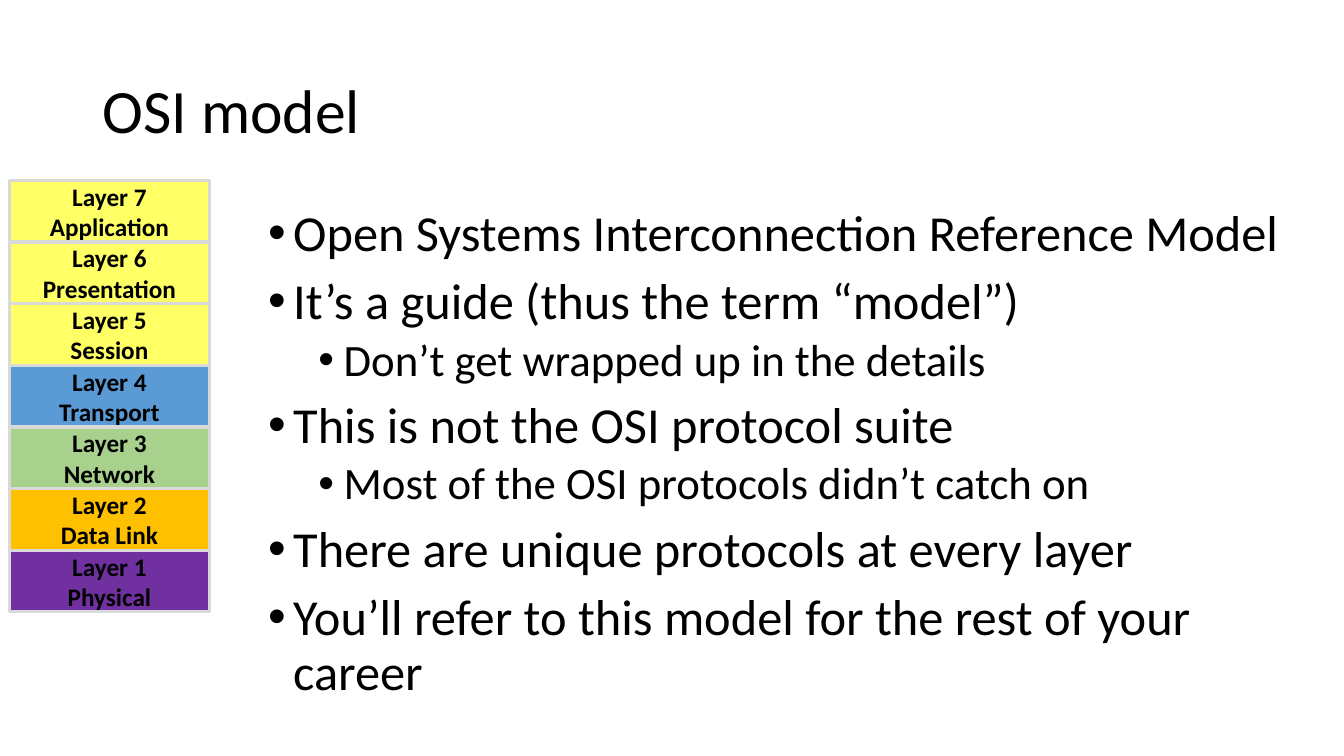
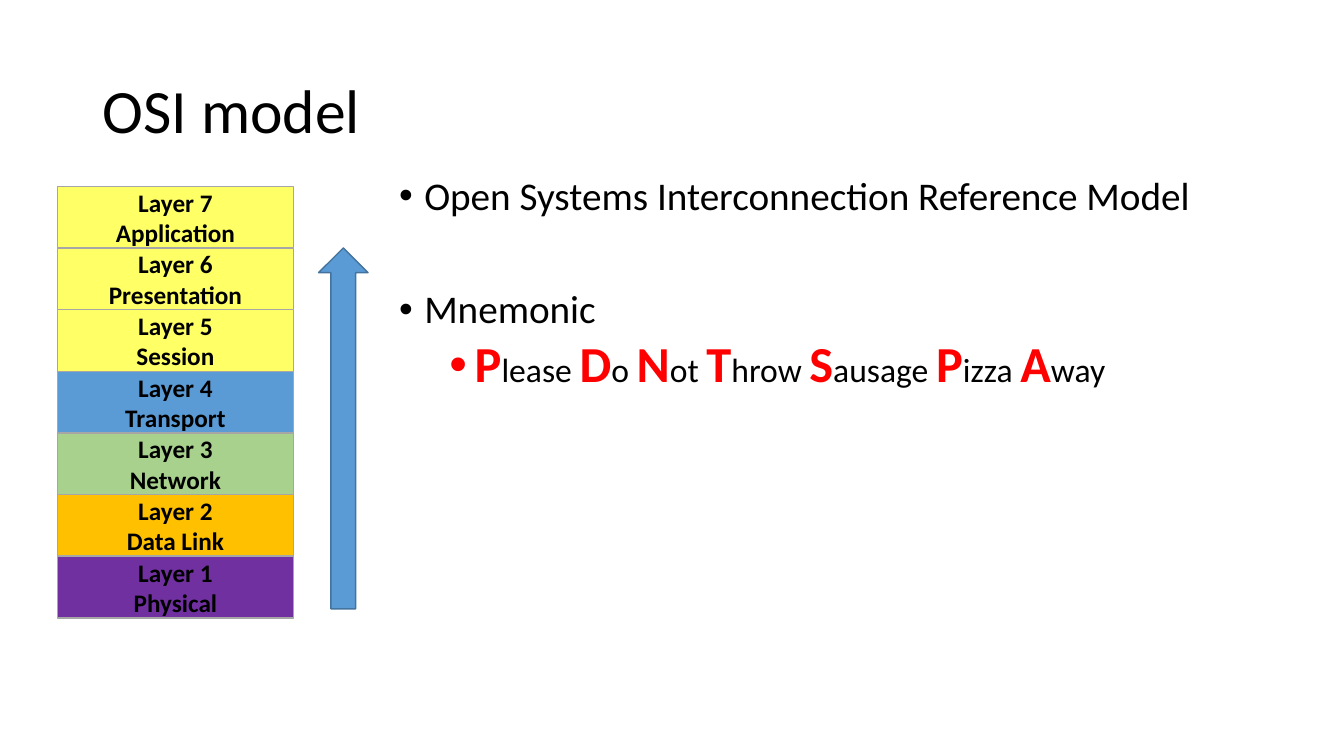
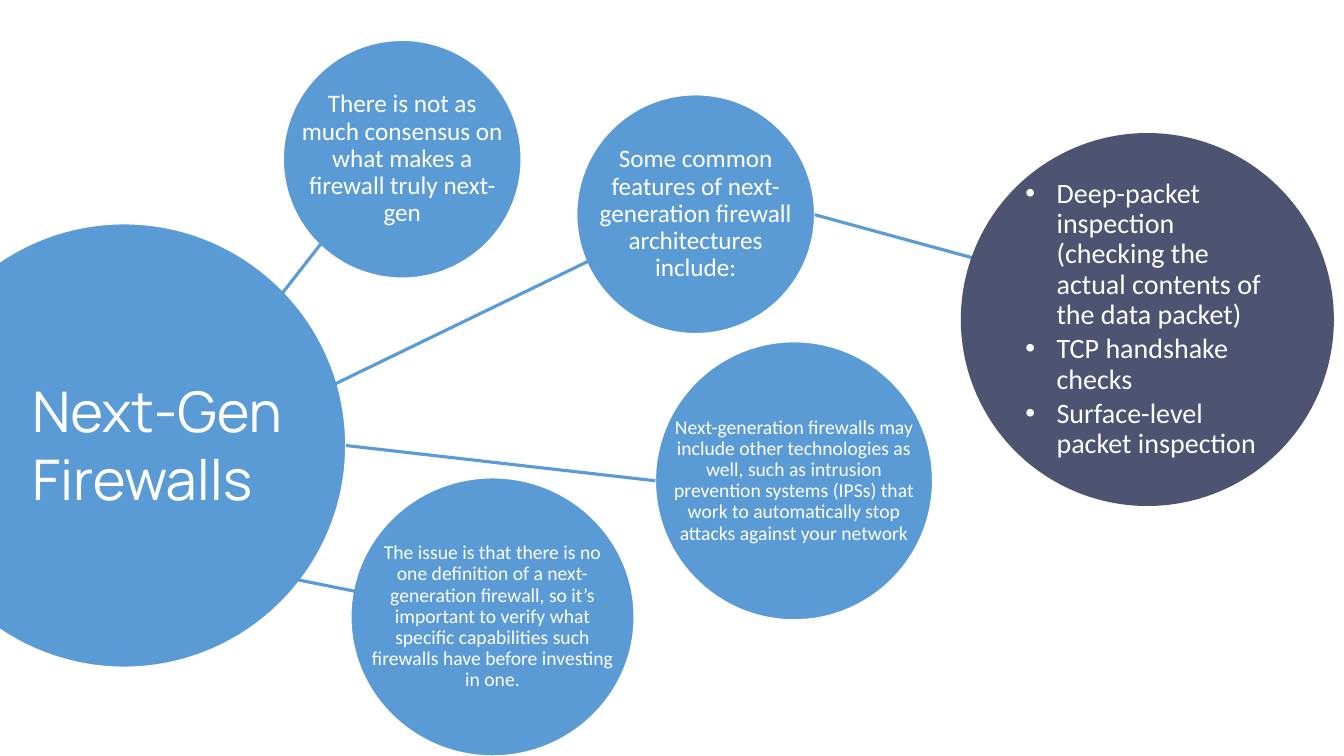
from dataclasses import dataclass
from math import acos, cos, pi, sin, tan

from lxml.etree import SubElement
from pptx import Presentation
from pptx.dml.color import RGBColor as RGB
from pptx.enum.shapes import MSO_CONNECTOR as LINE, MSO_SHAPE as SHAPE
from pptx.enum.text import MSO_ANCHOR as ANCHOR, PP_ALIGN as ALIGN
from pptx.oxml.ns import qn
from pptx.util import Inches, Pt


@dataclass(frozen=True)
class Theme:
    # Colours
    black: str = "000000"
    white: str = "FFFFFF"
    red: str = "FF0000"
    blue: str = "5B9BD5"
    blue_edge: str = "43739E"
    navy: str = "4C5471"
    yellow: str = "FFFF66"
    green: str = "A9D18E"
    orange: str = "FFC000"
    purple: str = "7030A0"
    light_grey: str = "D9D9D9"
    grey: str = "A6A6A6"
    # Fonts and type sizes
    font: str = "Calibri"
    display_font: str = "Manrope"
    title: int = 44
    display: int = 40
    body: int = 36
    sub: int = 32
    medium: int = 28
    small: int = 24
    feature: int = 20
    label: int = 18
    note: int = 14


T = Theme()

LAYERS = [
    ("Application", T.yellow),
    ("Presentation", T.yellow),
    ("Session", T.yellow),
    ("Transport", T.blue),
    ("Network", T.green),
    ("Data Link", T.orange),
    ("Physical", T.purple),
]

# Bullets: level, text
OSI_POINTS = [
    (0, "Open Systems Interconnection Reference Model"),
    (0, "It’s a guide (thus the term “model”)"),
    (1, "Don’t get wrapped up in the details"),
    (0, "This is not the OSI protocol suite"),
    (1, "Most of the OSI protocols didn’t catch on"),
    (0, "There are unique protocols at every layer"),
    (0, "You’ll refer to this model for the rest of your career"),
]

# Circles: left, top, width, height, inset, type size, text
BUBBLES = [
    (2.81, 0.4, 2.36, 2.36, 0.17, T.label,
     "There is not as much consensus on what makes a firewall truly next-gen"),
    (5.72, 0.94, 2.36, 2.37, 0.17, T.label,
     "Some common features of next-generation firewall architectures include:"),
    (6.5, 3.39, 2.75, 2.76, 0.18, T.note,
     "Next-generation firewalls may include other technologies as well, such as "
     "intrusion prevention systems (IPSs) that work to automatically stop attacks "
     "against your network"),
    (3.48, 4.74, 2.81, 2.76, 0.18, T.note,
     "The issue is that there is no one definition of a next-generation firewall, "
     "so it’s important to verify what specific capabilities such firewalls have "
     "before investing in one."),
]

# Links: from x, from y, to x, to y
LINKS = [
    (5.88, 2.57, 3.28, 3.83),
    (3.19, 2.41, 2.76, 2.96),
    (6.5, 4.77, 3.43, 4.42),
    (3.64, 5.89, 2.54, 5.67),
    (9.69, 2.57, 8.08, 2.13),
]

FEATURES = [
    "Deep-packet inspection (checking the actual contents of the data packet)",
    "TCP handshake checks",
    "Surface-level packet inspection",
]


# Text helpers
def add_run(p, text, size, color=T.black, bold=False, font=T.font):
    r = p.add_run()
    r.text = text
    r.font.name, r.font.size, r.font.bold = font, Pt(size), bold
    r.font.color.rgb = RGB.from_string(color)


def add_paragraph(tf, first=False, align=ALIGN.LEFT, spacing=0.9, before=0, after=0):
    p = tf.paragraphs[0] if first else tf.add_paragraph()
    p.alignment, p.line_spacing = align, spacing
    p.space_before, p.space_after = Pt(before), Pt(after)
    return p


def set_bullet(p, left, hang, level=0):
    p.level = level
    pPr = p._p.get_or_add_pPr()
    pPr.set("marL", str(Inches(left)))
    pPr.set("indent", str(-Inches(hang)))
    SubElement(pPr, qn("a:buFont"), typeface="Arial")
    SubElement(pPr, qn("a:buChar"), char="•")


def add_body_point(tf, level=0, first=False, before=None):
    if before is None:
        before = 5 if level else 10
    p = add_paragraph(tf, first, before=before)
    set_bullet(p, 0.25 + 0.5 * level, 0.25, level)
    return p


def add_text_box(slide, left, top, width, height, anchor=ANCHOR.TOP):
    sp = slide.shapes.add_textbox(*map(Inches, (left, top, width, height)))
    tf = sp.text_frame
    tf.word_wrap, tf.vertical_anchor = True, anchor
    return tf


# Shape helpers
def style(sp, fill, line=None, weight=1):
    sp.shadow.inherit = False
    sp.fill.solid()
    sp.fill.fore_color.rgb = RGB.from_string(fill)
    if line:
        sp.line.color.rgb = RGB.from_string(line)
        sp.line.width = Pt(weight)
    else:
        sp.line.fill.background()
    return sp


def add_preset(slide, kind, box, fill, line=None, weight=1):
    sp = slide.shapes.add_shape(kind, *map(Inches, box))
    sp.text_frame.word_wrap = True
    sp.text_frame.vertical_anchor = ANCHOR.MIDDLE
    return style(sp, fill, line, weight)


def arc_points(cx, cy, rx, ry, start, end):
    """Two control points and the end point of one curved arc."""
    k = 4 / 3 * tan((end - start) / 4)
    units = [
        (cos(start) - k * sin(start), sin(start) + k * cos(start)),
        (cos(end) + k * sin(end), sin(end) - k * cos(end)),
        (cos(end), sin(end)),
    ]
    return [(Inches(cx + rx * x), Inches(cy + ry * y)) for x, y in units]


def add_circle(slide, left, top, width, height, edge=-0.03):
    """Round outline whose text area is its full box, cut straight at the edge."""
    rx, ry = width / 2, height / 2
    cx, cy = left + rx, top + ry
    limit = acos(max(-1, (edge - cx) / rx))
    stops = [-limit, -pi / 2, 0, pi / 2, limit]
    points = []
    for start, end in zip(stops, stops[1:]):
        points += arc_points(cx, cy, rx, ry, start, end)
    outline = slide.shapes.build_freeform(
        Inches(cx + rx * cos(limit)), Inches(cy - ry * sin(limit)))
    outline.add_line_segments(points, close=True)
    sp = outline.convert_to_shape()
    # Turn each three line segments into one curve
    segments = list(sp._element.iter(qn("a:lnTo")))
    for i in range(0, len(points), 3):
        curve = segments[i]
        curve.tag = qn("a:cubicBezTo")
        for segment in segments[i + 1:i + 3]:
            curve.append(segment[0])
            segment.getparent().remove(segment)
    return style(sp, T.blue, T.white)


def add_bubble(slide, left, top, width, height, inset, size, text):
    tf = add_circle(slide, left, top, width, height).text_frame
    tf.word_wrap, tf.vertical_anchor = True, ANCHOR.MIDDLE
    tf.margin_left = tf.margin_right = Inches(inset)
    tf.margin_top = tf.margin_bottom = Inches(inset)
    add_run(add_paragraph(tf, True, ALIGN.CENTER), text, size, T.white)


def add_link(slide, *ends):
    link = slide.shapes.add_connector(LINE.STRAIGHT, *map(Inches, ends))
    link.line.color.rgb = RGB.from_string(T.blue)
    link.line.width = Pt(2.25)
    SubElement(link._element.spPr, qn("a:effectLst"))


# Parts shared by the OSI slides
def add_title(slide, text):
    tf = add_text_box(slide, 0.92, 0.4, 11.5, 1.45, ANCHOR.MIDDLE)
    add_run(add_paragraph(tf, True), text, T.title)


def add_layer_stack(slide, left, top, width, line, weight):
    height, span = 0.61, 3.67
    pitch = span / (len(LAYERS) - 1)
    for i, (name, fill) in enumerate(LAYERS):
        box = (left, top + i * pitch, width, height)
        tf = add_preset(slide, SHAPE.RECTANGLE, box, fill, line, weight).text_frame
        for text in (f"Layer {len(LAYERS) - i}", name):
            p = add_paragraph(tf, text != name, ALIGN.CENTER, spacing=1.0)
            add_run(p, text, T.label, bold=True)


# Slides
def build_osi_overview(slide):
    add_title(slide, "OSI model")
    tf = add_text_box(slide, 2.56, 2.01, 10.68, 5.4)
    for i, (level, text) in enumerate(OSI_POINTS):
        p = add_body_point(tf, level, first=i == 0)
        add_run(p, text, T.sub if level else T.body)
    add_layer_stack(slide, 0.09, 1.79, 1.99, T.light_grey, 2.25)


def build_osi_mnemonic(slide):
    add_title(slide, "OSI model")
    tf = add_text_box(slide, 3.86, 1.7, 8.2, 5.4)
    add_run(add_body_point(tf, first=True), OSI_POINTS[0][1], T.medium)
    add_run(add_body_point(tf, before=51), "Mnemonic", T.medium)
    p = add_body_point(tf, level=1)
    words = "Please Do Not Throw Sausage Pizza Away".split()
    for i, word in enumerate(words):
        gap = " " if i < len(words) - 1 else ""
        add_run(p, word[0], T.body, T.red, bold=True)
        add_run(p, word[1:] + gap, T.small)
    add_layer_stack(slide, 0.57, 1.85, 2.34, T.grey, 1)
    add_preset(slide, SHAPE.UP_ARROW, (3.16, 2.46, 0.49, 3.58), T.blue, T.blue_edge)


def build_firewalls(slide):
    # Main circle and its satellites
    add_circle(slide, -0.97, 2.22, 4.4, 4.4)
    for bubble in BUBBLES:
        add_bubble(slide, *bubble)
    tf = add_text_box(slide, 0.22, 3.69, 3, 1.45)
    p = add_paragraph(tf, True, spacing=1.0)
    add_run(p, "Next-Gen Firewalls", T.display, T.white, font=T.display_font)
    for link in LINKS:
        add_link(slide, *link)
    # Feature list
    sp = add_preset(slide, SHAPE.OVAL, (9.53, 1.32, 3.7, 3.7), T.navy)
    for i, text in enumerate(FEATURES):
        p = add_paragraph(sp.text_frame, i == 0, after=3)
        set_bullet(p, 0.31, 0.31, level=1)
        add_run(p, text, T.feature, T.white)


def main():
    prs = Presentation()
    prs.slide_width, prs.slide_height = Inches(13.33), Inches(7.5)
    for build in (build_osi_overview, build_osi_mnemonic, build_firewalls):
        build(prs.slides.add_slide(prs.slide_layouts[6]))
    prs.save("out.pptx")


if __name__ == "__main__":
    main()
